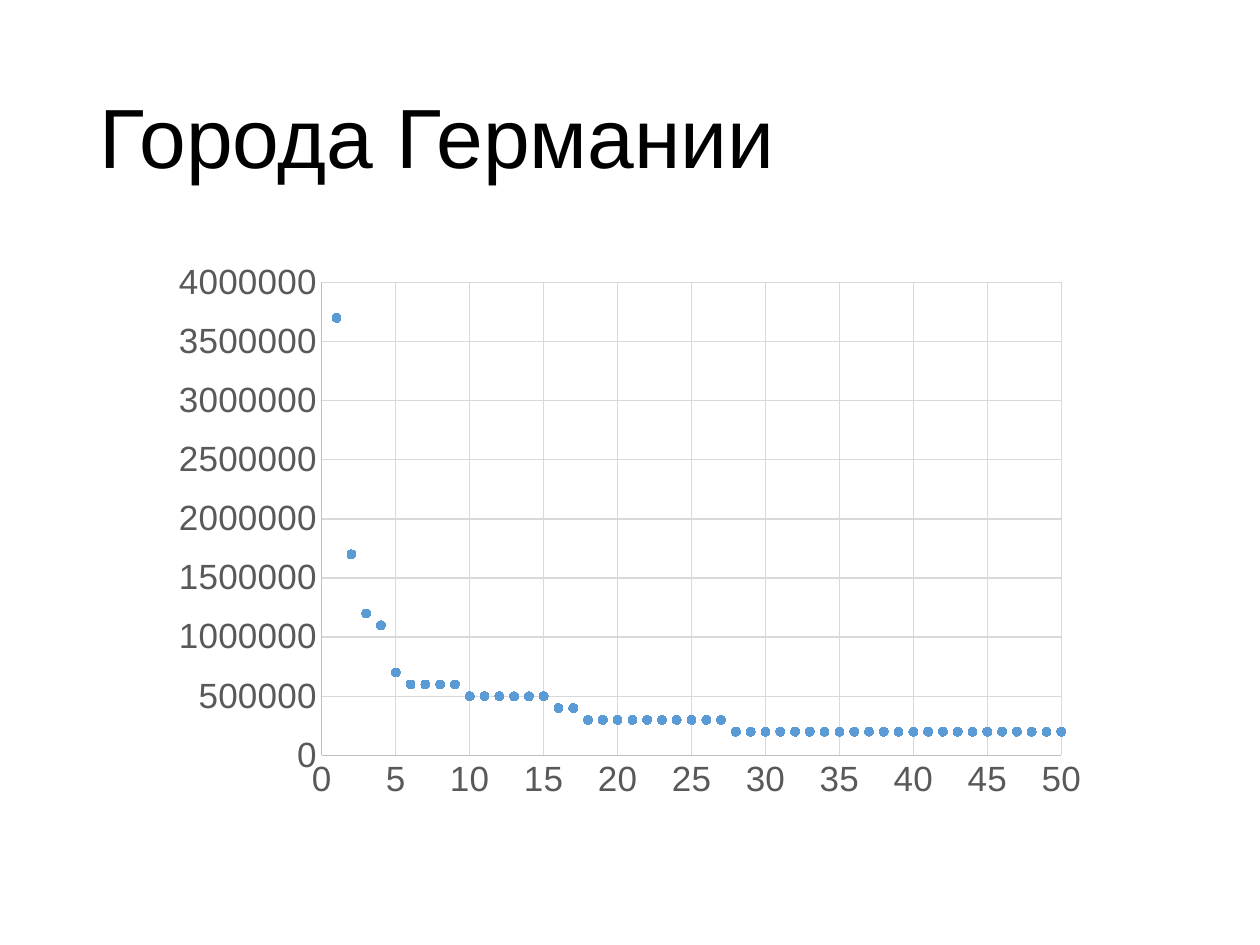
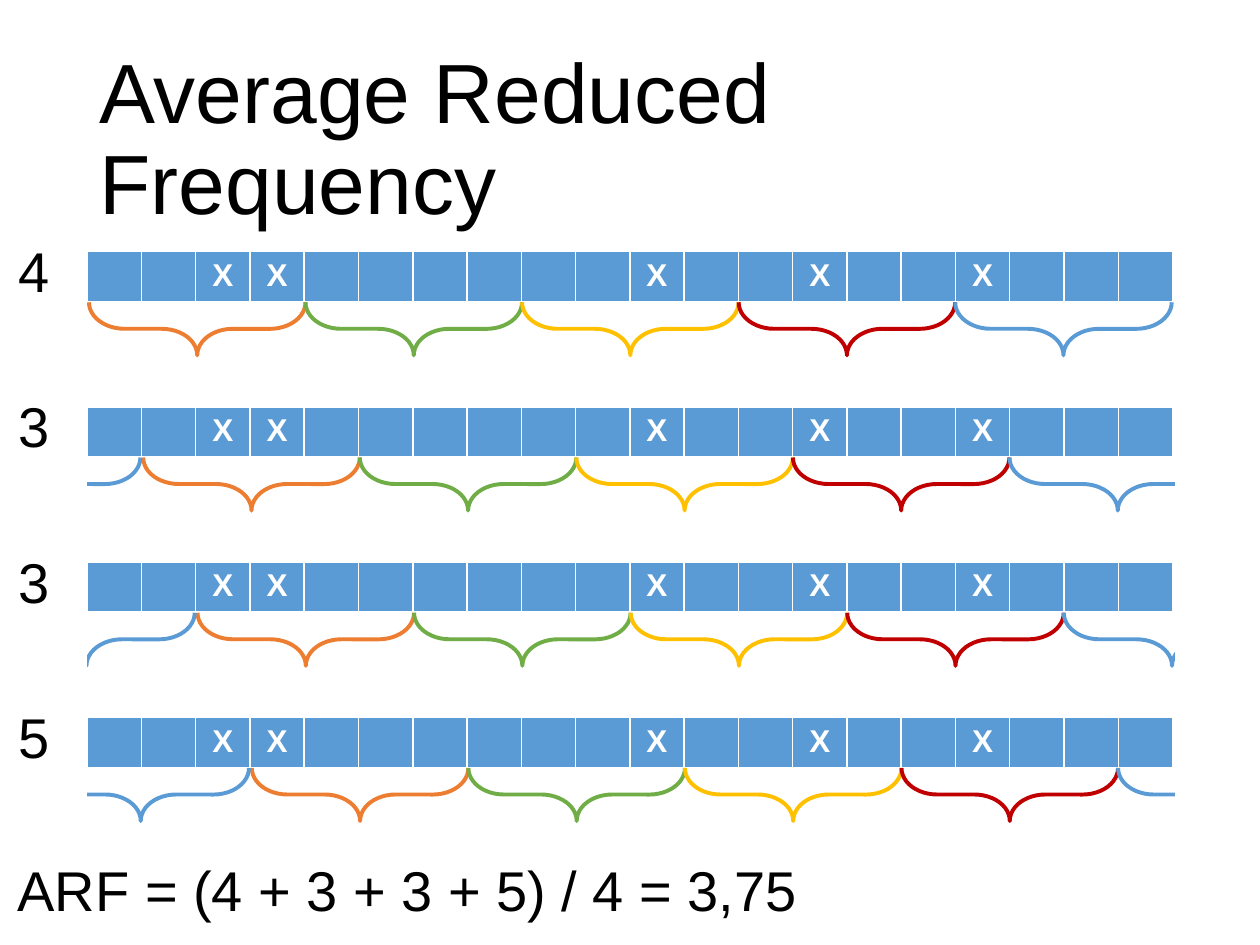
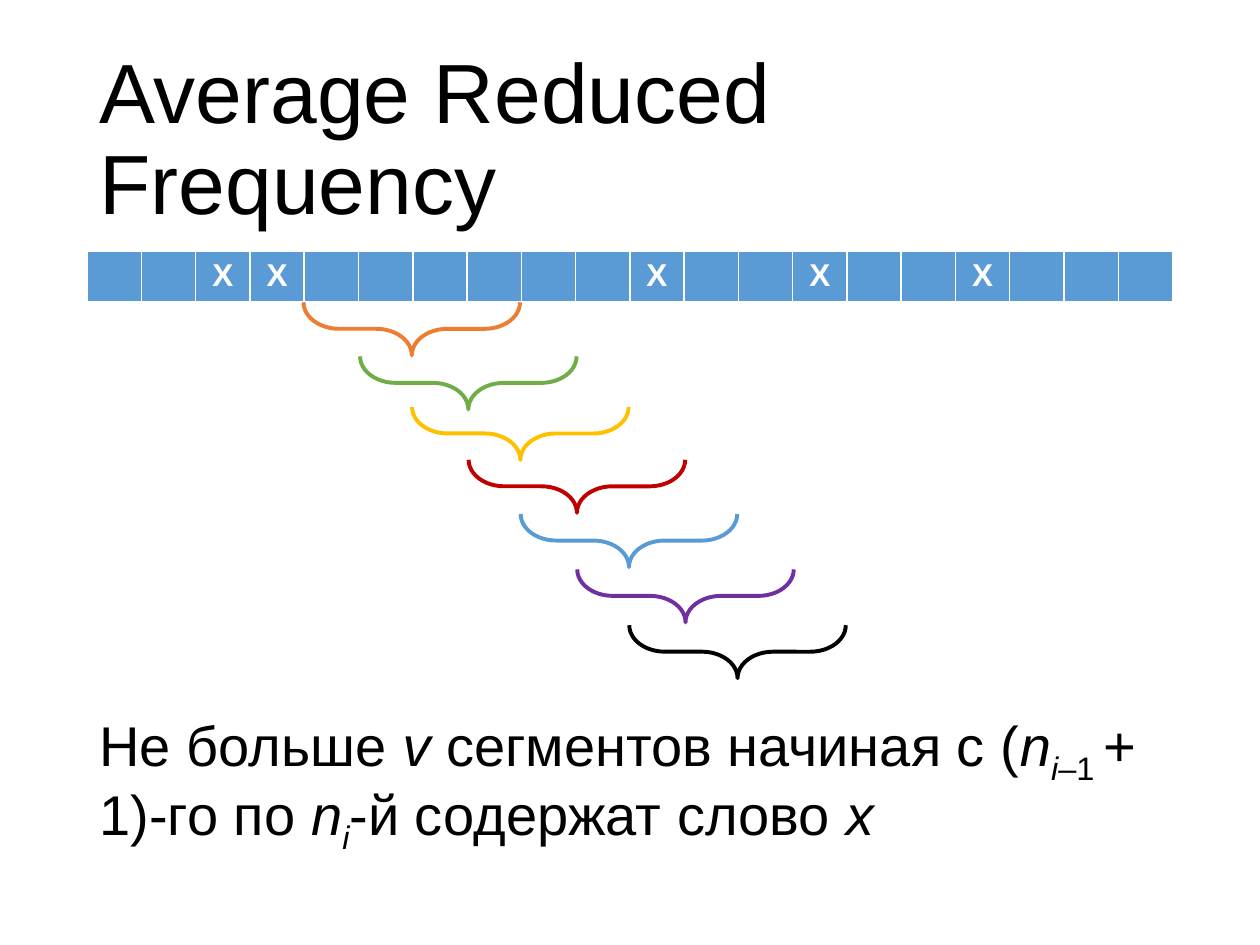
import dataclasses

import lxml.etree
import pptx
import pptx.chart.data
import pptx.dml.color
import pptx.enum.chart
import pptx.enum.shapes
import pptx.enum.text
import pptx.oxml.ns
import pptx.util

Pt = pptx.util.Pt
qn = pptx.oxml.ns.qn


@dataclasses.dataclass(frozen=True)
class Theme:
    font: str = "Arial"
    ink: str = "000000"
    white: str = "FFFFFF"
    blue: str = "5B9BD5"
    orange: str = "ED7D31"
    green: str = "70AD47"
    gold: str = "FFC000"
    red: str = "C00000"
    purple: str = "7030A0"
    label: str = "595959"
    axis: str = "BFBFBF"
    grid: str = "D9D9D9"
    title: int = 48
    body: int = 32
    tick: int = 20
    cell: int = 18


@dataclasses.dataclass(frozen=True)
class Box:
    left: float
    top: float
    width: float
    height: float

    def place(self):
        return [Pt(v) for v in (self.left, self.top, self.width, self.height)]


T = Theme()
HUES = [T.orange, T.green, T.gold, T.red, T.blue]
HEAD = Box(49.8, 28.75, 620.5, 104.4)
STRIP = Box(49.8, 143.75, 620.5, 29.5)
CELLS = 20
MARKS = {2, 3, 10, 13, 16}
SPAN = 4
CELL = STRIP.width / CELLS
REACH = 123.75
DROP = 29
DEPTH = 30.3
CITIES = [37, 17, 12, 11, 7] + [6] * 4 + [5] * 6 + [4] * 2 + [3] * 10 + [2] * 23
UNIT = 100000


def rgb(hue):
    return pptx.dml.color.RGBColor.from_string(hue)


def style(font, size, hue, bold=False):
    font.name = T.font
    font.size = Pt(size)
    font.bold = bold
    font.color.rgb = rgb(hue)


def stroke(line, hue, width):
    line.color.rgb = rgb(hue)
    line.width = Pt(width)


def write(slide, box, runs, size=T.body, before=10, middle=False):
    frame = slide.shapes.add_textbox(*box.place()).text_frame
    frame.word_wrap = True
    if middle:
        frame.vertical_anchor = pptx.enum.text.MSO_ANCHOR.MIDDLE
    para = frame.paragraphs[0]
    para.line_spacing = 0.9
    para.space_before = Pt(before)
    for text, *flags in runs:
        run = para.add_run()
        run.text = text
        style(run.font, size, T.ink)
        run.font.italic = "i" in flags
        if "sub" in flags:
            run.font._element.set("baseline", "-25000")


def head(slide, text):
    write(slide, HEAD, [(text,)], T.title, 0, True)


def edge(cell):
    props = cell._tc.get_or_add_tcPr()
    for side, width in (("L", 1), ("R", 1), ("T", 1), ("B", 3)):
        line = lxml.etree.SubElement(props, qn("a:ln" + side), w=str(Pt(width)))
        fill = lxml.etree.SubElement(line, qn("a:solidFill"))
        lxml.etree.SubElement(fill, qn("a:srgbClr"), val=T.white)


def strip(slide, box):
    table = slide.shapes.add_table(1, CELLS, *box.place()).table
    table.horz_banding = False
    table.rows[0].height = Pt(box.height)
    for col in range(CELLS):
        table.columns[col].width = Pt(box.width / CELLS)
        cell = table.cell(0, col)
        edge(cell)
        cell.fill.solid()
        cell.fill.fore_color.rgb = rgb(T.blue)
        if col in MARKS:
            para = cell.text_frame.paragraphs[0]
            para.alignment = pptx.enum.text.PP_ALIGN.CENTER
            run = para.add_run()
            run.text = "X"
            style(run.font, T.cell, T.white, True)


def brace(slide, box, hue):
    turned = Box(
        box.left + (box.width - box.height) / 2,
        box.top + (box.height - box.width) / 2,
        box.height,
        box.width,
    )
    shape = slide.shapes.add_shape(
        pptx.enum.shapes.MSO_SHAPE.RIGHT_BRACE, *turned.place()
    )
    shape.rotation = 90
    shape.adjustments[0] = 0.67
    shape.adjustments[1] = 0.5
    shape.shadow.inherit = False
    shape.fill.background()
    stroke(shape.line, hue, 2.25)


def mask(slide, box):
    shape = slide.shapes.add_shape(
        pptx.enum.shapes.MSO_SHAPE.RECTANGLE, *box.place()
    )
    shape.shadow.inherit = False
    shape.fill.solid()
    shape.fill.fore_color.rgb = rgb(T.white)
    stroke(shape.line, T.white, 1)


def split(slide, box, shift):
    strip(slide, box)
    start = box.left + 1 + shift * CELL
    top = box.top + DROP
    for step, hue in enumerate(HUES):
        brace(slide, Box(start + step * REACH, top, REACH, DEPTH), hue)
    if shift:
        brace(slide, Box(start - REACH - 1.6, top, REACH, DEPTH), T.blue)


def scatter(slide, box):
    data = pptx.chart.data.XyChartData()
    series = data.add_series("Series 1")
    for rank, size in enumerate(CITIES, 1):
        series.add_data_point(rank, size * UNIT)
    kind = pptx.enum.chart.XL_CHART_TYPE.XY_SCATTER
    chart = slide.shapes.add_chart(kind, *box.place(), data).chart
    chart.has_legend = False
    chart.has_title = False
    style(chart.font, T.tick, T.label)
    for axis in (chart.category_axis, chart.value_axis):
        axis.has_major_gridlines = True
        stroke(axis.major_gridlines.format.line, T.grid, 0.75)
        stroke(axis.format.line, T.axis, 0.75)
        axis.major_tick_mark = pptx.enum.chart.XL_TICK_MARK.NONE
        axis.minor_tick_mark = pptx.enum.chart.XL_TICK_MARK.NONE
        style(axis.tick_labels.font, T.tick, T.label)
    chart.category_axis.minimum_scale = 0
    chart.category_axis.maximum_scale = len(CITIES)
    plot = chart.plots[0]
    plot.vary_by_categories = False
    dots = plot.series[0]
    dots.smooth = False
    dots.format.line.fill.background()
    dots.marker.style = pptx.enum.chart.XL_MARKER_STYLE.CIRCLE
    dots.marker.size = 5
    dots.marker.format.fill.solid()
    dots.marker.format.fill.fore_color.rgb = rgb(T.blue)
    stroke(dots.marker.format.line, T.blue, 0.75)


def cities(slide):
    head(slide, "Города Германии")
    scatter(slide, Box(91.5, 143.75, 537, 319.7))


def shifts(slide):
    head(slide, "Average Reduced Frequency")
    counts = [4, 3, 3, 5]
    tops = [STRIP.top + row * 88.7 for row in range(len(counts))]
    for shift, top in enumerate(tops):
        split(slide, dataclasses.replace(STRIP, top=top), shift)
    mask(slide, Box(-45.4, 0, 94.7, 540))
    for count, top in zip(counts, tops):
        write(slide, Box(3.2, top - 7.75, 29.5, 30), [(str(count),)])
    total = " + ".join(str(count) for count in counts)
    write(slide, Box(3, 489.6, 483, 30), [(f"ARF = ({total}) / 4 = 3,75",)])
    mask(slide, Box(672.2, 0, 93.6, 540))


def stairs(slide):
    head(slide, "Average Reduced Frequency")
    strip(slide, STRIP)
    drops = [0, 30.9, 59.8, 90, 121, 152.6, 184.5]
    for step, hue in enumerate(HUES + [T.purple, T.ink]):
        left = STRIP.left - 0.5 + (SPAN + step) * CELL + step % 2 * 1.3
        top = STRIP.top + DROP + drops[step]
        brace(slide, Box(left, top, REACH, DEPTH), hue)
    write(slide, Box(49.8, 403.2, 620.5, 95.8), [
        ("Не больше ",),
        ("v ", "i"),
        ("сегментов начиная с (",),
        ("n", "i"),
        ("i", "i", "sub"),
        ("–1 ", "sub"),
        ("+ 1)-го по ",),
        ("n", "i"),
        ("i", "i", "sub"),
        ("-й содержат слово ",),
        ("x", "i"),
    ])


def main():
    deck = pptx.Presentation()
    deck.slide_width = Pt(720)
    deck.slide_height = Pt(540)
    for draw in (cities, shifts, stairs):
        draw(deck.slides.add_slide(deck.slide_layouts[6]))
    deck.save("out.pptx")


if __name__ == "__main__":
    main()
